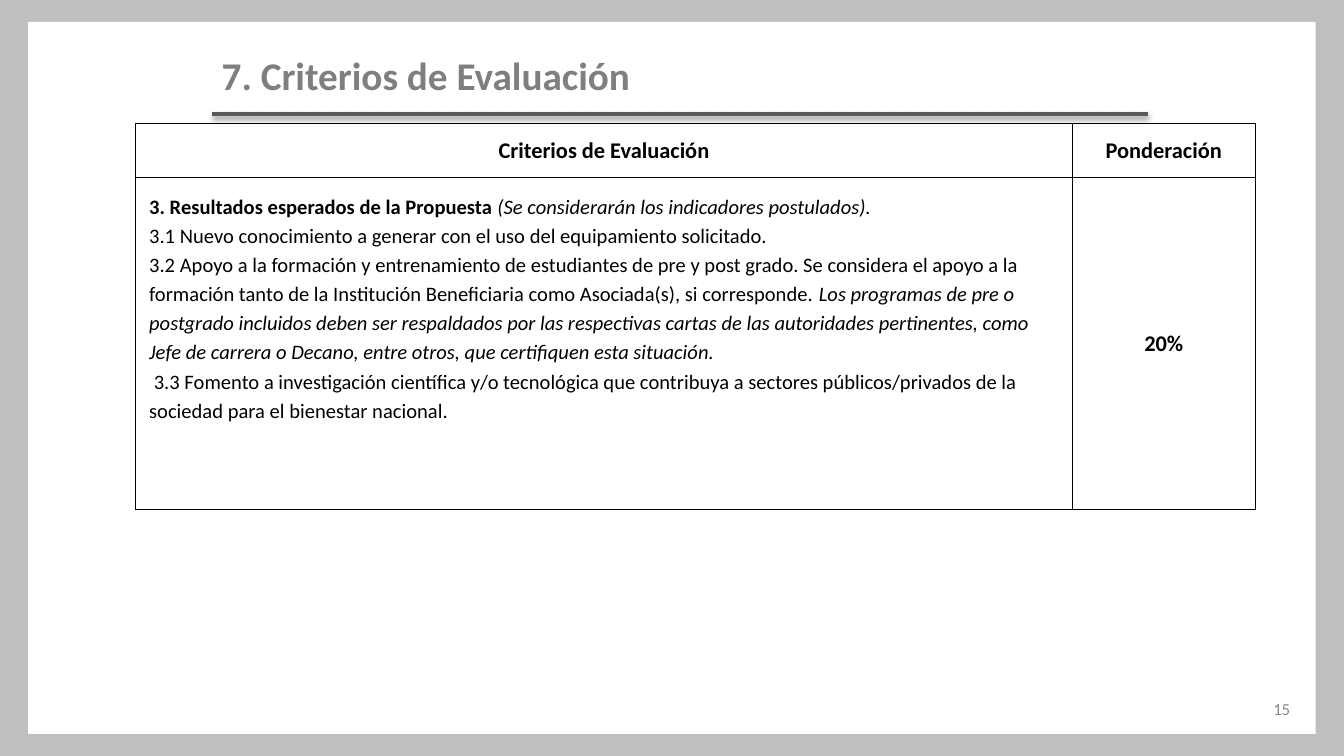
from dataclasses import dataclass

from lxml.etree import SubElement
from pptx import Presentation
from pptx.dml.color import RGBColor
from pptx.enum.shapes import MSO_CONNECTOR, MSO_SHAPE
from pptx.enum.text import MSO_ANCHOR, PP_ALIGN
from pptx.oxml import parse_xml
from pptx.oxml.ns import nsdecls, qn
from pptx.util import Emu, Inches, Pt

SLIDE_WIDTH, SLIDE_HEIGHT = Inches(10), Inches(5.625)


@dataclass(frozen=True)
class Theme:
    font: str = "Calibri"
    frame: str = "BFBFBF"
    panel: str = "FFFFFF"
    title: str = "7F7F7F"
    rule: str = "595959"
    number: str = "888888"
    ink: str = "000000"
    title_size: float = 21
    heading_size: float = 12
    body_size: float = 11
    number_size: float = 9
    rule_width: float = 2.25
    border_width: float = 0.75


THEME = Theme()


def across(percent: float) -> Emu:
    return Emu(round(SLIDE_WIDTH * percent / 100))


def down(percent: float) -> Emu:
    return Emu(round(SLIDE_HEIGHT * percent / 100))


@dataclass(frozen=True)
class Area:
    """A place on the slide, in percent of its width and height."""
    left: float
    top: float
    width: float
    height: float

    def lengths(self) -> tuple[Emu, Emu, Emu, Emu]:
        return across(self.left), down(self.top), across(self.width), down(self.height)


@dataclass(frozen=True)
class Span:
    text: str
    size: float
    color: str = THEME.ink
    bold: bool = False
    italic: bool = False
    break_after: bool = False


def write(para, spans: list[Span], align=PP_ALIGN.LEFT) -> None:
    para.alignment = align
    for span in spans:
        run = para.add_run()
        run.text = span.text
        font = run.font
        font.name, font.size = THEME.font, Pt(span.size)
        font.bold, font.italic = span.bold, span.italic
        font.color.rgb = RGBColor.from_string(span.color)
        if span.break_after:
            para.add_line_break()


def add_panel(page, area: Area, color: str) -> None:
    panel = page.shapes.add_shape(MSO_SHAPE.RECTANGLE, *area.lengths())
    panel.shadow.inherit = False
    panel.fill.solid()
    panel.fill.fore_color.rgb = RGBColor.from_string(color)
    panel.line.fill.background()


def add_text(page, area: Area, span: Span, align, anchor) -> None:
    box = page.shapes.add_textbox(*area.lengths())
    frame = box.text_frame
    frame.word_wrap = True
    frame.vertical_anchor = anchor
    frame.margin_left = frame.margin_right = Inches(0.07)
    frame.margin_top = frame.margin_bottom = Inches(0.04)
    write(frame.paragraphs[0], [span], align)


def add_rule(page, left: float, right: float, top: float) -> None:
    rule = page.shapes.add_connector(
        MSO_CONNECTOR.STRAIGHT, across(left), down(top), across(right), down(top))
    rule.line.color.rgb = RGBColor.from_string(THEME.rule)
    rule.line.width = Pt(THEME.rule_width)
    rule._element.spPr.append(parse_xml(
        f'<a:effectLst {nsdecls("a")}>'
        f'<a:outerShdw blurRad="{Pt(3.1)}" dist="{Pt(1.6)}" dir="5400000" rotWithShape="0">'
        f'<a:srgbClr val="{THEME.ink}"><a:alpha val="38000"/></a:srgbClr>'
        '</a:outerShdw></a:effectLst>'))


def style_cell(cell, anchor) -> None:
    properties = cell._tc.get_or_add_tcPr()
    for side in ("lnL", "lnR", "lnT", "lnB"):
        border = SubElement(properties, qn(f"a:{side}"), w=str(Pt(THEME.border_width)))
        fill = SubElement(border, qn("a:solidFill"))
        SubElement(fill, qn("a:srgbClr"), val=THEME.ink)
    cell.fill.background()
    cell.vertical_anchor = anchor
    cell.margin_left = cell.margin_right = Inches(0.1)
    cell.margin_top = cell.margin_bottom = Inches(0.1)


def add_criteria_table(page, area: Area, columns: list[float], rows: list[float],
                       headings: list[str], criteria: list[Span], weight: str) -> None:
    table = page.shapes.add_table(len(rows), len(columns), *area.lengths()).table
    table.first_row = table.horz_banding = False
    for column, width in zip(table.columns, columns):
        column.width = across(width)
    for row, height in zip(table.rows, rows):
        row.height = down(height)

    # Heading row
    for index, heading in enumerate(headings):
        cell = table.cell(0, index)
        style_cell(cell, MSO_ANCHOR.TOP)
        write(cell.text_frame.paragraphs[0],
              [Span(heading, THEME.heading_size, bold=True)], PP_ALIGN.CENTER)

    # Criteria and their weight
    cell = table.cell(1, 0)
    style_cell(cell, MSO_ANCHOR.TOP)
    para = cell.text_frame.paragraphs[0]
    para.line_spacing = 1.15
    para.space_before = para.space_after = Pt(14)
    write(para, criteria)
    cell = table.cell(1, 1)
    style_cell(cell, MSO_ANCHOR.MIDDLE)
    write(cell.text_frame.paragraphs[0],
          [Span(weight, THEME.heading_size, bold=True)], PP_ALIGN.CENTER)


CRITERIA = [
    Span("3. Resultados esperados de la Propuesta ", THEME.body_size, bold=True),
    Span("(Se considerarán los indicadores postulados).", THEME.body_size,
         italic=True, break_after=True),
    Span("3.1 Nuevo conocimiento a generar con el uso del equipamiento solicitado.",
         THEME.body_size, break_after=True),
    Span("3.2 Apoyo a la formación y entrenamiento de estudiantes de pre y post grado. "
         "Se considera el apoyo a la formación tanto de la Institución Beneficiaria como "
         "Asociada(s), si corresponde. ", THEME.body_size),
    Span("Los programas de pre o postgrado incluidos deben ser respaldados por las "
         "respectivas cartas de las autoridades pertinentes, como Jefe de carrera o Decano, "
         "entre otros, que certifiquen esta situación.", THEME.body_size,
         italic=True, break_after=True),
    Span(" 3.3 Fomento a investigación científica y/o tecnológica que contribuya a sectores "
         "públicos/privados de la sociedad para el bienestar nacional.", THEME.body_size),
]


def main() -> None:
    deck = Presentation()
    deck.slide_width, deck.slide_height = SLIDE_WIDTH, SLIDE_HEIGHT
    page = deck.slides.add_slide(deck.slide_layouts[6])

    # Grey frame around a white panel
    add_panel(page, Area(0, 0, 100, 100), THEME.frame)
    add_panel(page, Area(2.1, 2.9, 95.8, 94.2), THEME.panel)

    # Title, rule and page number
    add_text(page, Area(15.8, 6.04, 69.6, 7.82),
             Span("7. Criterios de Evaluación", THEME.title_size, THEME.title, bold=True),
             PP_ALIGN.LEFT, MSO_ANCHOR.TOP)
    add_rule(page, 15.8, 85.4, 15.1)
    add_text(page, Area(79.8, 91.1, 16.9, 5.33),
             Span("15", THEME.number_size, THEME.number),
             PP_ALIGN.RIGHT, MSO_ANCHOR.MIDDLE)

    # Evaluation criteria
    add_criteria_table(page, Area(10.1, 16.36, 83.3, 51.02), [69.7, 13.6], [7.11, 43.91],
                       ["Criterios de Evaluación", "Ponderación"], CRITERIA, "20%")
    deck.save("out.pptx")


if __name__ == "__main__":
    main()
